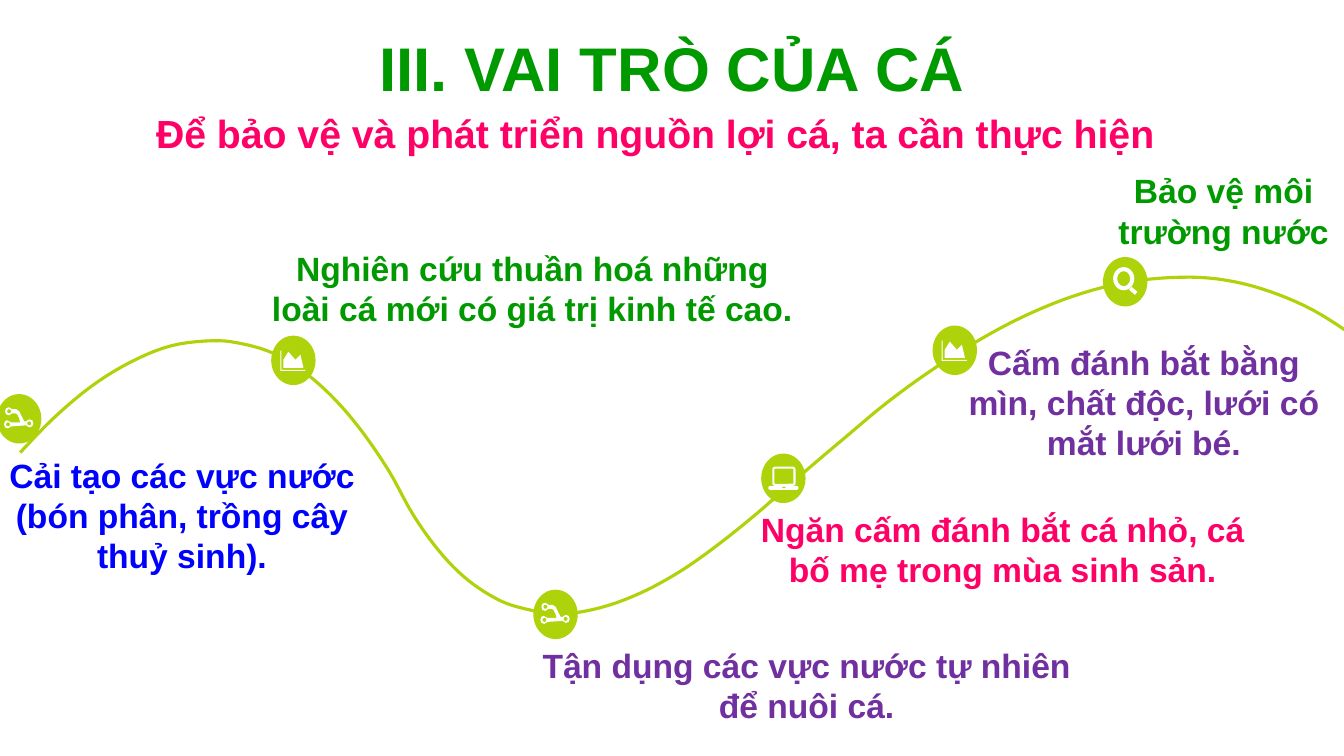
from dataclasses import dataclass
from math import cos, pi, sin

from pptx import Presentation
from pptx.dml.color import RGBColor
from pptx.enum.shapes import MSO_SHAPE
from pptx.enum.text import MSO_ANCHOR, MSO_AUTO_SIZE, PP_ALIGN
from pptx.util import Inches, Pt

OVAL = MSO_SHAPE.OVAL
DONUT = MSO_SHAPE.DONUT
ROUNDED = MSO_SHAPE.ROUNDED_RECTANGLE
CENTER, LEFT = PP_ALIGN.CENTER, PP_ALIGN.LEFT
MIDDLE = MSO_ANCHOR.MIDDLE
GROW, FIXED = MSO_AUTO_SIZE.SHAPE_TO_FIT_TEXT, MSO_AUTO_SIZE.NONE


@dataclass(frozen=True)
class Theme:
    font: str = "Arial"
    green: str = "009900"
    pink: str = "FF0066"
    purple: str = "7030A0"
    blue: str = "0000FF"
    lime: str = "AED30B"
    white: str = "FFFFFF"
    title: int = 44
    subtitle: int = 28
    body: int = 24
    road: float = 2.25
    stroke: float = 2.75
    thin: float = 1.5


ROAD = [
    (0.2, 4.49), (0.53, 4.15), (0.91, 3.83), (1.3, 3.59), (1.7, 3.43), (2.11, 3.38),
    (2.4, 3.41), (2.7, 3.5), (2.99, 3.67), (3.28, 3.92), (3.56, 4.24), (3.85, 4.66),
    (4.1, 5.11), (4.35, 5.46), (4.6, 5.72), (4.87, 5.91), (5.13, 6.02), (5.54, 6.09),
    (5.95, 6.03), (6.36, 5.88), (6.76, 5.66), (7.14, 5.39), (7.5, 5.1), (7.82, 4.82),
    (8.11, 4.57), (8.43, 4.3), (8.79, 4), (9.2, 3.7), (9.65, 3.41), (10.13, 3.15),
    (10.64, 2.94), (11.17, 2.8), (11.72, 2.75), (12.16, 2.78), (12.59, 2.89),
    (13.03, 3.08), (13.47, 3.36),
]
AXES = [(-0.13, -0.1), (-0.12, -0.1), (-0.12, 0.09), (0.12, 0.09), (0.12, 0.1), (-0.13, 0.1)]
AREA = [(0.1, 0.07), (-0.1, 0.07), (-0.1, -0.01), (-0.05, -0.09), (0.02, -0.01), (0.07, -0.06)]
SHARE = [
    (-0.07, -0.1), (-0.03, -0.1), (0, -0.08), (0.03, -0.02), (0.05, 0.02), (0.07, 0.02),
    (0.1, 0), (0.13, 0.01), (0.14, 0.04), (0.13, 0.07), (0.1, 0.08), (0.07, 0.06),
    (-0.08, 0.07), (-0.11, 0.09), (-0.14, 0.08), (-0.15, 0.05), (-0.14, 0.02), (-0.12, 0.01),
    (-0.08, 0.03), (0.01, 0.03), (0, -0.01), (-0.02, -0.05), (-0.04, -0.06), (-0.07, -0.06),
    (-0.1, -0.04), (-0.13, -0.05), (-0.14, -0.08), (-0.13, -0.11), (-0.1, -0.12),
]
SHARE_HOLES = [(-0.1, -0.08), (-0.11, 0.05), (0.1, 0.04)]


def smooth(points, steps=5):
    padded = [points[0], *points, points[-1]]
    curve = []
    for a, b, c, d in zip(padded, padded[1:], padded[2:], padded[3:]):
        for t in (i / steps for i in range(steps)):
            curve.append(tuple(
                q + t * (r - p + t * (2 * p - 5 * q + 4 * r - e + t * (3 * (q - r) + e - p))) / 2
                if t else q
                for p, q, r, e in zip(a, b, c, d)))
    return curve + [points[-1]]


def ring(x, y, radius, sides=12):
    angles = (2 * pi * i / sides for i in range(sides))
    return [(x + radius * cos(a), y + radius * sin(a)) for a in angles]


class Roadmap:
    def __init__(self, slide, theme):
        self.s = slide
        self.theme = theme

    def text(self, text, box, color, size, align=CENTER):
        sp = self.s.shapes.add_textbox(*map(Inches, box))
        tf = sp.text_frame
        tf.word_wrap = True
        tf.auto_size = GROW
        tf.text = text
        p = tf.paragraphs[0]
        p.alignment = align
        for r in p.runs:
            r.font.name = self.theme.font
            r.font.size = Pt(size)
            r.font.bold = True
            r.font.color.rgb = RGBColor.from_string(color)
        return sp

    def title(self, text, box):
        tf = self.text(text, box, self.theme.green, self.theme.title).text_frame
        tf.auto_size = FIXED
        tf.vertical_anchor = MIDDLE
        tf.paragraphs[0].line_spacing = 0.9

    def paint(self, sp, color, width=None):
        sp.shadow.inherit = False
        rgb = RGBColor.from_string(color)
        if width:
            sp.fill.background()
            sp.line.color.rgb = rgb
            sp.line.width = Pt(width)
        else:
            sp.fill.solid()
            sp.fill.fore_color.rgb = rgb
            sp.line.fill.background()

    def shape(self, shapes, kind, center, offset, size, color, width=None, adjust=None):
        x, y = (c + o for c, o in zip(center, offset))
        sp = shapes.add_shape(kind, Inches(x), Inches(y), *map(Inches, size))
        if adjust is not None:
            sp.adjustments[0] = adjust
        self.paint(sp, color, width)

    def outline(self, shapes, contours, color, width=None, center=(0, 0)):
        moved = [[(Inches(center[0] + x), Inches(center[1] + y)) for x, y in points]
                 for points in contours]
        builder = shapes.build_freeform(*moved[0][0])
        for i, points in enumerate(moved):
            if i:
                builder.move_to(*points[0])
            builder.add_line_segments(points[1:], close=width is None)
        self.paint(builder.convert_to_shape(), color, width)

    def marker(self, center, icon):
        shapes = self.s.shapes.add_group_shape().shapes
        self.shape(shapes, OVAL, center, (-0.22, -0.25), (0.44, 0.49), self.theme.lime)
        icon(shapes, center)

    def chart_icon(self, shapes, center):
        self.outline(shapes, [AXES, AREA], self.theme.white, center=center)

    def share_icon(self, shapes, center):
        holes = [ring(x, y, 0.02)[::-1] for x, y in SHARE_HOLES]
        self.outline(shapes, [SHARE, *holes], self.theme.white, center=center)

    def laptop_icon(self, shapes, center):
        white = self.theme.white
        self.shape(shapes, ROUNDED, center, (-0.1, -0.11), (0.21, 0.17), white, self.theme.thin, 0.1)
        self.shape(shapes, ROUNDED, center, (-0.15, 0.07), (0.3, 0.04), white, adjust=0.5)
        self.shape(shapes, ROUNDED, center, (-0.01, 0.08), (0.03, 0.01), self.theme.lime)

    def search_icon(self, shapes, center):
        white = self.theme.white
        self.shape(shapes, DONUT, center, (-0.12, -0.15), (0.21, 0.23), white, adjust=0.19)
        self.outline(shapes, [[(0.05, 0.06), (0.11, 0.11)]], white, self.theme.stroke, center)


def main():
    prs = Presentation()
    prs.slide_width, prs.slide_height = Inches(13.33), Inches(7.5)
    s = prs.slides.add_slide(prs.slide_layouts[6])
    theme = Theme()
    road = Roadmap(s, theme)

    road.text("Để bảo vệ và phát triển nguồn lợi cá, ta cần thực hiện",
              (1.45, 1.04, 10.76, 0.57), theme.pink, theme.subtitle, LEFT)
    road.title("III. VAI TRÒ CỦA CÁ", (0.92, 0.14, 11.5, 1.14))
    road.outline(s.shapes, [smooth(ROAD)], theme.lime, theme.road)

    markers = [
        ((7.77, 4.75), road.laptop_icon),
        ((5.51, 6.1), road.share_icon),
        ((9.47, 3.48), road.chart_icon),
        ((11.16, 2.8), road.search_icon),
        ((0.19, 4.16), road.share_icon),
        ((2.91, 3.58), road.chart_icon),
    ]
    for center, icon in markers:
        road.marker(center, icon)

    measures = [
        ("Tận dụng các vực nước tự nhiên để nuôi cá.", (5.19, 6.35, 5.62, 0.91), theme.purple),
        ("Nghiên cứu thuần hoá những loài cá mới có giá trị kinh tế cao.",
         (2.56, 2.41, 5.44, 0.91), theme.green),
        ("Cải tạo các vực nước\v(bón phân, trồng cây thuỷ sinh).",
         (-0.28, 4.46, 4.17, 1.31), theme.blue),
        ("Ngăn cấm đánh bắt cá nhỏ, cá bố mẹ trong mùa sinh sản.",
         (7.41, 5, 5.07, 0.91), theme.pink),
        ("Bảo vệ môi trường nước", (10.94, 1.64, 2.39, 0.91), theme.green),
        ("Cấm đánh bắt bằng mìn, chất độc, lưới có mắt lưới bé.",
         (9.5, 3.34, 3.69, 1.31), theme.purple),
    ]
    for text, box, color in measures:
        road.text(text, box, color, theme.body)

    prs.save("out.pptx")


if __name__ == "__main__":
    main()
